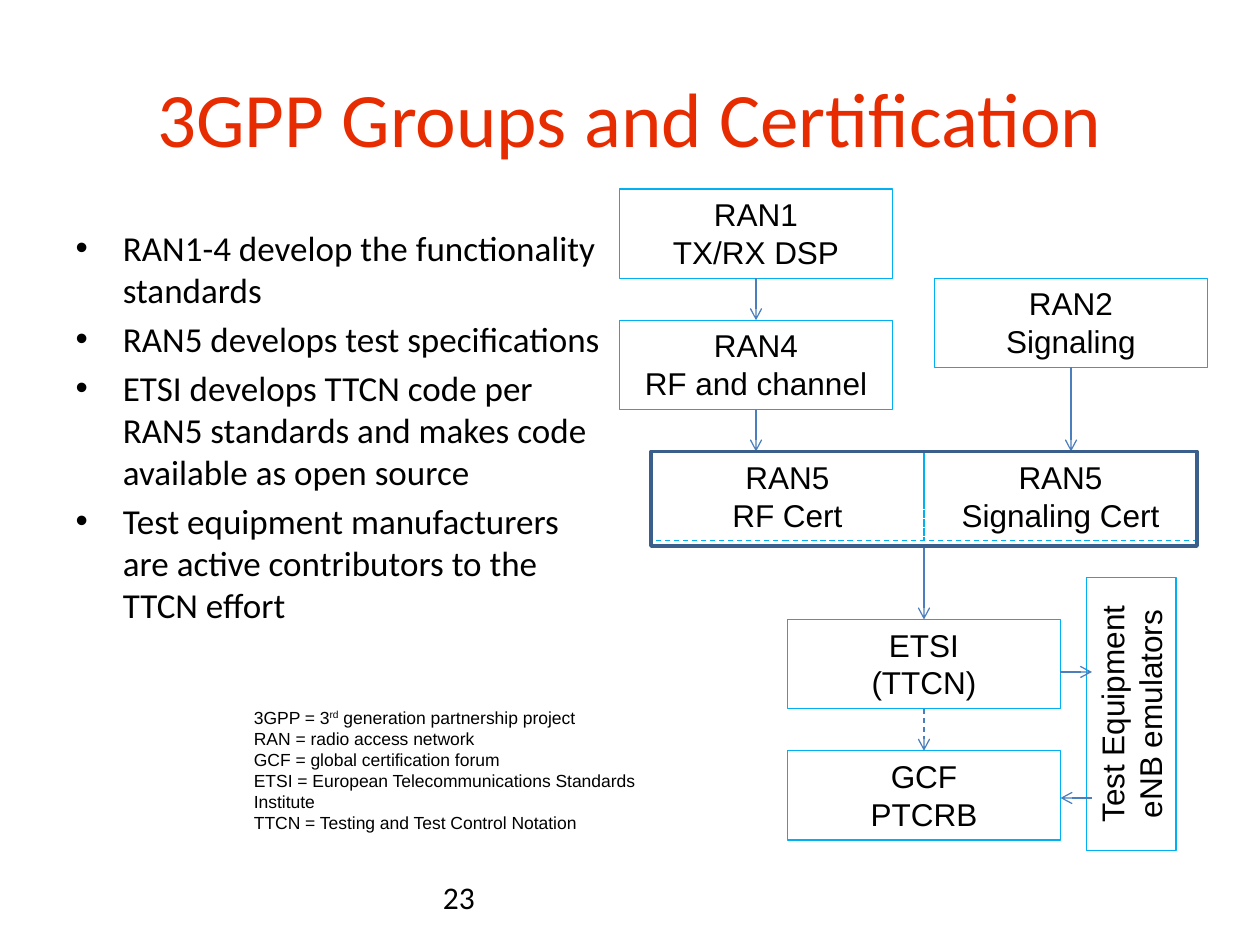
from lxml import etree
from pptx import Presentation
from pptx.dml.color import RGBColor
from pptx.enum.dml import MSO_LINE
from pptx.enum.shapes import MSO_CONNECTOR, MSO_SHAPE
from pptx.enum.text import MSO_ANCHOR, PP_ALIGN
from pptx.oxml.ns import qn
from pptx.util import Inches, Pt

CENTER, LEFT = PP_ALIGN.CENTER, PP_ALIGN.LEFT
TOP, MIDDLE = MSO_ANCHOR.TOP, MSO_ANCHOR.MIDDLE
DASH = MSO_LINE.DASH
STRAIGHT = MSO_CONNECTOR.STRAIGHT
RECTANGLE = MSO_SHAPE.RECTANGLE

COLORS = {"title": "E62C00", "text": "000000", "box": "00B0F0",
          "arrow": "4B7EBC", "frame": "3A5F8C"}

# The grid has twelve cells to the inch
CELLS_PER_INCH = 12
BOX_WIDTH, BOX_HEIGHT = 26, 8.5

BULLETS = [
    "RAN1-4 develop the functionality standards",
    "RAN5 develops test specifications",
    "ETSI develops TTCN code per RAN5 standards and makes code available as open source",
    "Test equipment manufacturers are active contributors to the TTCN effort",
]

# Each paragraph is a list of (text, superscript) runs
LEGEND = [
    [("3GPP = 3", False), ("rd", True), (" generation partnership project", False)],
    [("RAN = radio access network", False)],
    [("GCF = global certification forum", False)],
    [("ETSI = European Telecommunications Standards Institute", False)],
    [("TTCN = Testing and Test Control Notation", False)],
]

# Column, row, text (\v is a line break inside a paragraph), dash style
BOXES = [
    (59, 18, "RAN1\nTX/RX DSP", None),
    (59, 30.5, "RAN4\nRF and channel", None),
    (89, 26.5, "RAN2\nSignaling", None),
    (88, 43, "RAN5\nSignaling Cert", DASH),
    (62, 43, "RAN5\nRF Cert", DASH),
    (75, 59, "ETSI\v(TTCN)", None),
    (75, 71.5, "GCF\vPTCRB", None),
]

# Start column, start row, end column, end row, dash style
ARROWS = [
    (72, 26.5, 72, 30.5, None),
    (72, 39, 72, 43, None),
    (102, 35, 102, 43, None),
    (88, 52, 88, 59, None),
    (88, 67.5, 88, 71.5, DASH),
    (101, 64, 104, 64, None),
    (104, 76, 101, 76, None),
]


def cells(*counts):
    return [Inches(count / CELLS_PER_INCH) for count in counts]


def place(shape, *grid):
    shape.left, shape.top, shape.width, shape.height = cells(*grid)


def format_text(text_frame, size, font="Arial", color="text", align=None, anchor=TOP):
    text_frame.word_wrap = True
    text_frame.vertical_anchor = anchor
    for paragraph in text_frame.paragraphs:
        if align is not None:
            paragraph.alignment = align
        for run in paragraph.runs:
            run.font.size = Pt(size)
            run.font.name = font
            run.font.color.rgb = RGBColor.from_string(COLORS[color])


def format_line(line, color, width, dash=None):
    line.color.rgb = RGBColor.from_string(COLORS[color])
    line.width = Pt(width)
    if dash is not None:
        line.dash_style = dash


def add_box(slide, grid, text="", color="box", width=0.75, dash=None, rotation=0):
    shape = slide.shapes.add_shape(RECTANGLE, *cells(*grid))
    shape.shadow.inherit = False
    shape.fill.background()
    shape.rotation = rotation
    format_line(shape.line, color, width, dash)
    if text:
        shape.text_frame.text = text
        format_text(shape.text_frame, 18, align=CENTER)


def add_arrow(slide, ends, dash):
    connector = slide.shapes.add_connector(STRAIGHT, *cells(*ends))
    format_line(connector.line, "arrow", 0.75, dash)
    line = connector.line._get_or_add_ln()
    etree.SubElement(line, qn("a:tailEnd"), type="arrow")
    etree.SubElement(connector._element.spPr, qn("a:effectLst"))


def add_title_and_bullets(slide):
    title, body = slide.shapes.title, slide.placeholders[1]
    place(title, 6, 3.6, 108, 15)
    title.text_frame.text = "3GPP Groups and Certification"
    format_text(title.text_frame, 44, "Calibri", "title", CENTER, MIDDLE)

    place(body, 6, 21, 53, 59.4)
    body.text_frame.text = "\n".join(BULLETS)
    body.text_frame.paragraphs[0].space_before = Pt(0)
    format_text(body.text_frame, 20, "Calibri", align=LEFT)


def add_legend(slide):
    text_frame = slide.shapes.add_textbox(*cells(23, 66.7, 41.4, 11.3)).text_frame
    for index, parts in enumerate(LEGEND):
        paragraph = text_frame.add_paragraph() if index else text_frame.paragraphs[0]
        for text, superscript in parts:
            run = paragraph.add_run()
            run.text = text
            if superscript:
                run.font._element.set("baseline", "30000")
    format_text(text_frame, 10)


def add_page_number(slide):
    text_frame = slide.shapes.add_textbox(*cells(41, 83, 28, 4.8)).text_frame
    text_frame.text = "23"
    format_text(text_frame, 18, "Calibri")


def main():
    presentation = Presentation()
    presentation.slide_width, presentation.slide_height = Inches(10), Inches(7.5)
    slide = presentation.slides.add_slide(presentation.slide_layouts[1])
    add_title_and_bullets(slide)

    # Flow of groups
    for column, row, text, dash in BOXES:
        add_box(slide, (column, row, BOX_WIDTH, BOX_HEIGHT), text, dash=dash)
    add_box(slide, (94.75, 63.75, BOX_WIDTH, BOX_HEIGHT),
            "Test Equipment\veNB emulators", rotation=270)
    for *ends, dash in ARROWS:
        add_arrow(slide, ends, dash)

    # Frame around both RAN5 boxes
    add_box(slide, (62, 43, 2 * BOX_WIDTH, 9), color="frame", width=2)

    add_legend(slide)
    add_page_number(slide)
    presentation.save("out.pptx")


if __name__ == "__main__":
    main()
